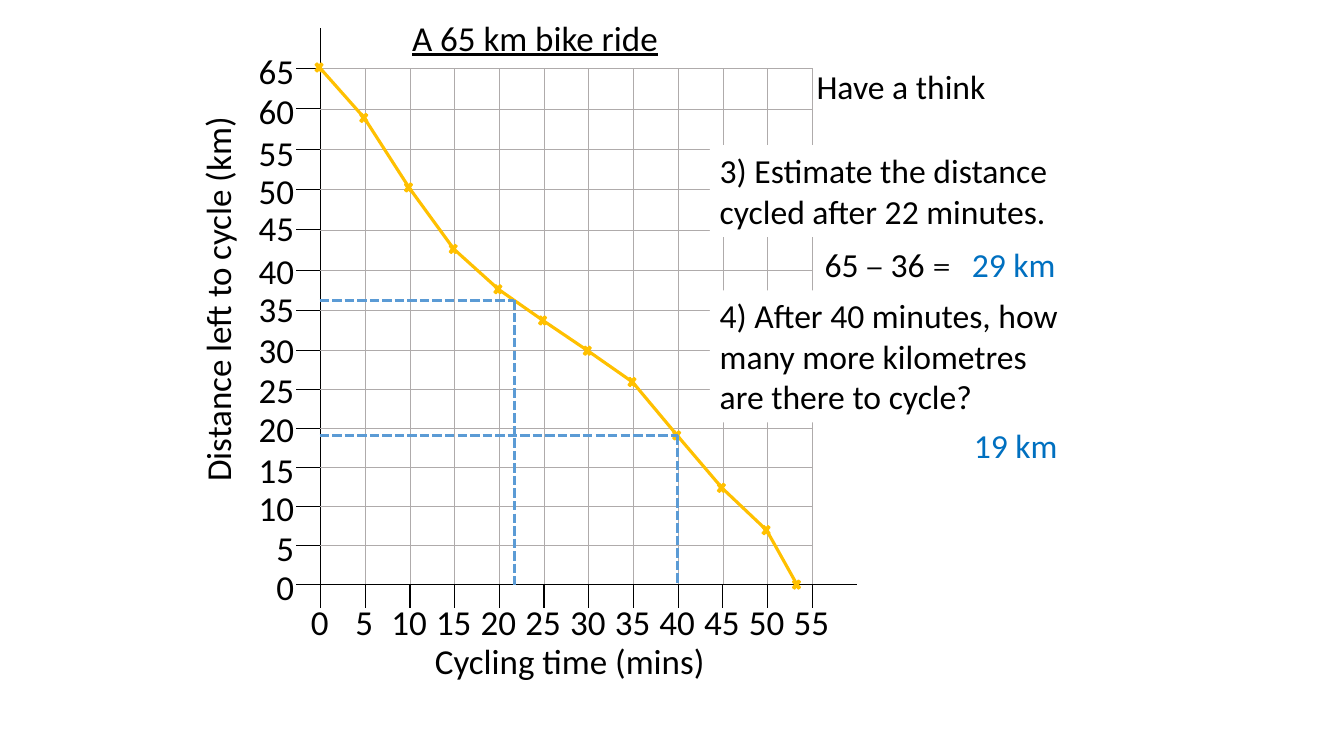
import pptx
import pptx.dml.color
import pptx.enum.dml
import pptx.enum.shapes
import pptx.enum.text
import pptx.oxml
import pptx.oxml.ns
import pptx.util
from pptx.util import Inches

COLOURS = {"black": "000000", "grid": "AFABAB", "curve": "FFC000",
           "guide": "5B9BD5", "answer": "0070C0", "white": "FFFFFF"}
SHAPE = pptx.enum.shapes.MSO_SHAPE
LEFT = pptx.enum.text.PP_ALIGN.LEFT
CENTRE = pptx.enum.text.PP_ALIGN.CENTER

AXIS_X, STEP_X = 3.17, 5.32 / 12
GRID_LEFT, GRID_TOP = 2.94, 0.28
COL_WIDTHS = [0.23] + [STEP_X] * 12 + [0.32]
ROW_HEIGHTS = [0.4] * 8 + [2.32 / 6] * 6 + [0.23]
AXIS_ROW = 14  # rows above the time axis
DISTANCE_TOPS = [5.56, 5.17, 4.78, 4.4, 3.99, 3.61, 3.21,
                 2.8, 2.43, 2, 1.63, 1.26, 0.84, 0.44]
# (minutes, height on the slide in inches) of each plotted point
RIDE = [(0, 0.67), (5, 1.17), (10, 1.86), (15, 2.47), (20, 2.87), (25, 3.18),
        (30, 3.48), (35, 3.79), (40, 4.32), (45, 4.84), (50, 5.26), (53.4, 5.8)]


def rgb(name):
    return pptx.dml.color.RGBColor.from_string(COLOURS[name])


def time_x(minutes):
    return AXIS_X + minutes / 5 * STEP_X


def vertical_edge(row, edge):
    """Colour and width of the grid line on the left of column `edge`."""
    if edge == 1 or (row == AXIS_ROW and 1 <= edge <= 12):
        return "black", 1
    if 1 <= row < AXIS_ROW and 2 <= edge <= 12:
        return "grid", 0.5
    return None


def horizontal_edge(edge, col):
    """Colour and width of the grid line on top of row `edge`."""
    if col == 0 and 1 <= edge <= AXIS_ROW:
        return "black", 1
    if edge == AXIS_ROW and col <= 12:
        return "black", 1
    if 1 <= edge < AXIS_ROW and col <= 11:
        return "grid", 0.5
    return None


def set_borders(cell, edges):
    tc_pr = cell._tc.get_or_add_tcPr()
    for i, (side, edge) in enumerate(zip("LRTB", edges)):
        colour, width = edge or (None, 0)
        fill = (f'<a:solidFill><a:srgbClr val="{COLOURS[colour]}"/></a:solidFill>'
                if edge else "<a:noFill/>")
        tc_pr.insert(i, pptx.oxml.parse_xml(
            f'<a:ln{side} {pptx.oxml.ns.nsdecls("a")} w="{int(width * 12700)}">'
            f"{fill}</a:ln{side}>"))


def add_grid(s):
    frame = s.shapes.add_table(
        len(ROW_HEIGHTS), len(COL_WIDTHS), Inches(GRID_LEFT), Inches(GRID_TOP),
        Inches(sum(COL_WIDTHS)), Inches(sum(ROW_HEIGHTS)))
    table = frame.table
    table.first_row = table.horz_banding = False
    for col, width in zip(table.columns, COL_WIDTHS):
        col.width = Inches(width)
    for r, height in enumerate(ROW_HEIGHTS):
        table.rows[r].height = Inches(height)
        for c in range(len(COL_WIDTHS)):
            cell = table.cell(r, c)
            cell.margin_top = cell.margin_bottom = 0
            cell.text_frame.paragraphs[0].font.size = pptx.util.Pt(8)
            cell.fill.background()
            set_borders(cell, (vertical_edge(r, c), vertical_edge(r, c + 1),
                               horizontal_edge(r, c), horizontal_edge(r + 1, c)))
    for r in (8, 10, 12):
        table.cell(r, 13).merge(table.cell(r + 1, 13))


def write(sp, text, size, colour, align):
    tf = sp.text_frame
    tf.word_wrap = True
    tf.auto_size = pptx.enum.text.MSO_AUTO_SIZE.SHAPE_TO_FIT_TEXT
    tf.vertical_anchor = pptx.enum.text.MSO_ANCHOR.TOP
    p = tf.paragraphs[0]
    p.text = text
    p.alignment = align
    p.font.name = "Calibri"
    p.font.size = pptx.util.Pt(size)
    p.font.color.rgb = rgb(colour)
    return p


def add_label(s, text, x, y, w):
    """Centred axis or title text; x is its left edge."""
    sp = s.shapes.add_textbox(Inches(x), Inches(y), Inches(w), Inches(0.52))
    write(sp, text, 25, "black", CENTRE)
    return sp


def add_note(s, text, x, y, w, colour="black"):
    sp = s.shapes.add_textbox(Inches(x), Inches(y), Inches(w), Inches(0.5))
    return write(sp, text, 24, colour, LEFT)


def add_question(s, text, y, h):
    sp = s.shapes.add_shape(SHAPE.RECTANGLE, Inches(7.04), Inches(y),
                            Inches(3.64), Inches(h))
    sp.shadow.inherit = False
    sp.fill.solid()
    sp.fill.fore_color.rgb = rgb("white")
    sp.line.fill.background()
    write(sp, text, 24, "black", LEFT)


def add_line(s, start, end, colour, dash=None):
    ln = s.shapes.add_connector(pptx.enum.shapes.MSO_CONNECTOR.STRAIGHT,
                                *map(Inches, start + end))
    ln.line.color.rgb = rgb(colour)
    ln.line.width = pptx.util.Pt(2.25)
    if dash:
        ln.line.dash_style = dash
    ln._element.spPr.append(pptx.oxml.parse_xml(
        f'<a:effectLst {pptx.oxml.ns.nsdecls("a")}/>'))


def add_marker(s, x, y):
    sp = s.shapes.add_shape(SHAPE.MATH_MULTIPLY, Inches(x - 0.06), Inches(y - 0.07),
                            Inches(0.11), Inches(0.14))
    sp.shadow.inherit = False
    sp.fill.solid()
    sp.fill.fore_color.rgb = rgb("curve")
    sp.line.color.rgb = rgb("curve")
    sp.line.width = pptx.util.Pt(1)


def add_axis_labels(s):
    for i, top in enumerate(DISTANCE_TOPS):
        centre = 2.83 if i < 2 else 2.74
        add_label(s, str(5 * i), centre - 0.35, top, 0.7)
    for minutes in range(0, 60, 5):
        add_label(s, str(minutes), time_x(minutes) - 0.31, 5.91, 0.62)
    add_label(s, "Cycling time (mins)", 3.92, 6.29, 3.46)
    add_label(s, "Distance left to cycle (km)", 0.15, 2.71, 4.01).rotation = 270


def add_ride(s):
    points = [(time_x(minutes), y) for minutes, y in RIDE]
    for x, y in points:
        add_marker(s, x, y)
    for start, end in zip(points, points[1:]):
        add_line(s, start, end, "curve")


def add_reading(s, x, y):
    """Dashed guides from both axes to a point on the curve."""
    dash = pptx.enum.dml.MSO_LINE.SQUARE_DOT
    add_line(s, (AXIS_X, y), (x, y), "guide", dash)
    add_line(s, (x, y), (x, 5.8), "guide", dash)


def add_working(s):
    p = add_note(s, "", 8.08, 2.37, 2.96)
    for text, font in (("65 ", "Calibri"), ("–", "Cambria"),
                       (" 36 ", "Calibri"), ("=", "Cambria")):
        r = p.add_run()
        r.text = text
        r.font.name = font


def main():
    prs = pptx.Presentation()
    prs.slide_width, prs.slide_height = Inches(13.33), Inches(7.5)
    s = prs.slides.add_slide(prs.slide_layouts[6])
    add_grid(s)
    add_axis_labels(s)
    add_ride(s)
    title = add_label(s, "A 65 km bike ride", 3.79, 0.11, 3.03)
    title.text_frame.paragraphs[0].font.underline = True
    add_question(s, "3) Estimate the distance cycled after 22 minutes.", 1.44, 0.91)
    add_working(s)
    add_note(s, "29 km", 9.54, 2.37, 1.25, "answer")
    add_question(s, "4) After 40 minutes, how many more kilometres "
                    "are there to cycle?", 2.88, 1.31)
    add_note(s, "Have a think", 8, 0.6, 2.29)
    add_reading(s, 5.1, 2.98)
    add_reading(s, 6.72, 4.32)
    add_note(s, "19 km", 9.56, 4.17, 1.25, "answer")
    prs.save("out.pptx")


if __name__ == "__main__":
    main()
